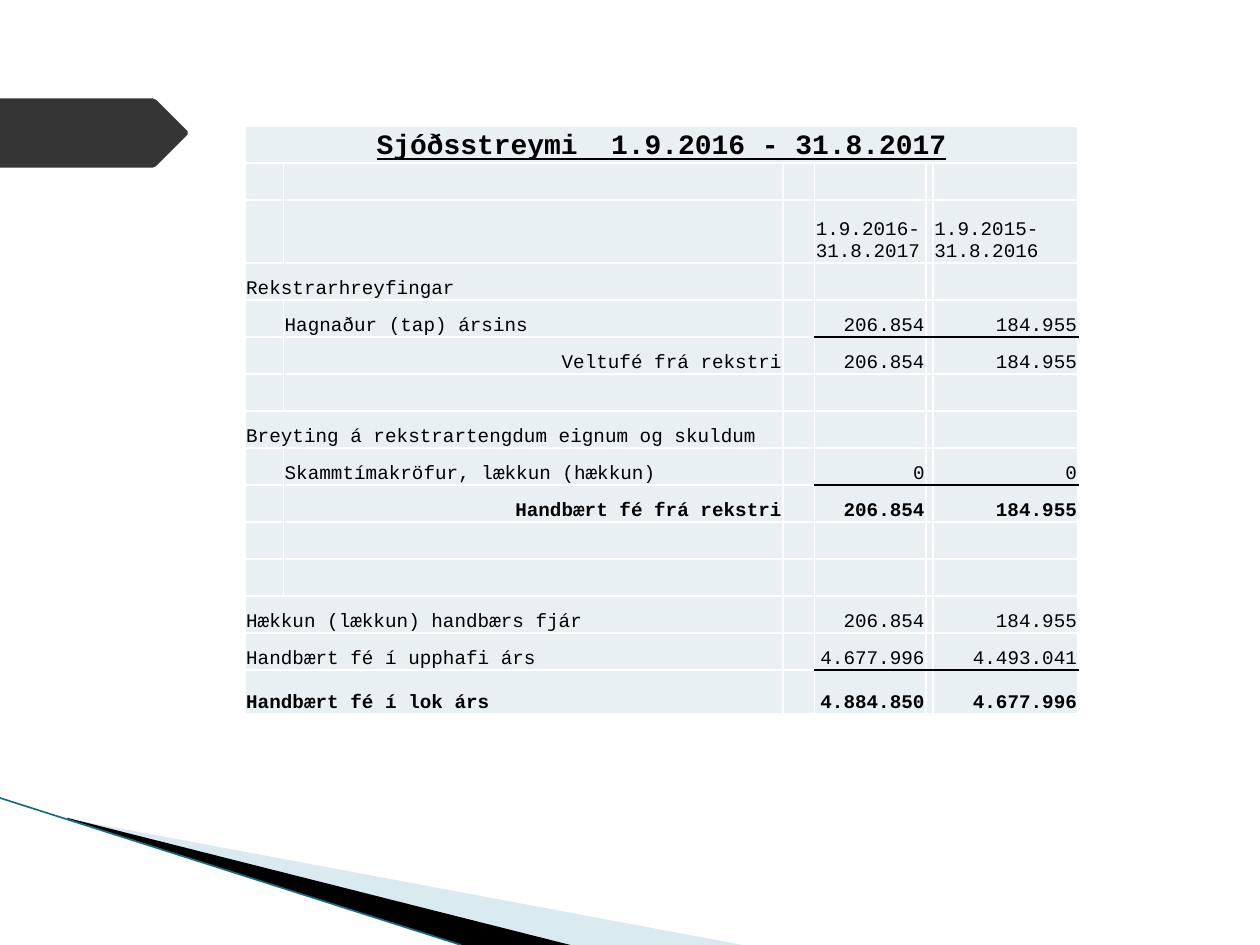
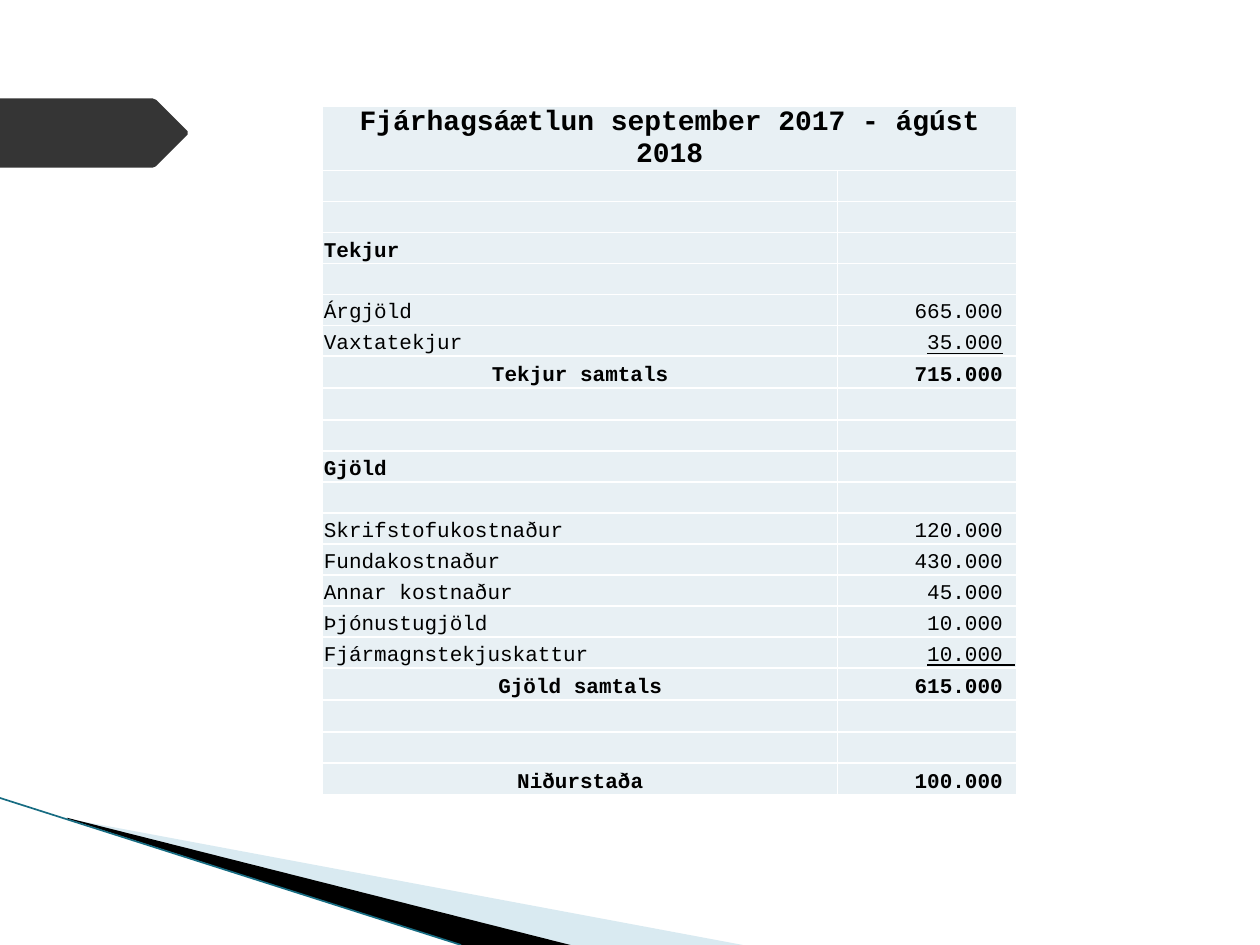
"""Build two slides: a cash flow statement and a budget."""
from lxml.etree import SubElement
from pptx import Presentation
from pptx.dml.color import RGBColor
from pptx.enum.shapes import MSO_CONNECTOR
from pptx.enum.text import MSO_ANCHOR, PP_ALIGN
from pptx.oxml.ns import qn
from pptx.util import Pt

BLACK = RGBColor(0x00, 0x00, 0x00)
WHITE = RGBColor(0xFF, 0xFF, 0xFF)
CHARCOAL = RGBColor(0x35, 0x35, 0x35)
PALE_BLUE = RGBColor(0xD9, 0xEA, 0xF1)
TEAL = RGBColor(0x17, 0x6C, 0x82)
CELL_TINT = RGBColor(0xE8, 0xF0, 0xF4)
FONT = "Courier New"
LEFT, CENTER, RIGHT = PP_ALIGN.LEFT, PP_ALIGN.CENTER, PP_ALIGN.RIGHT

DECORATIONS = [
    (PALE_BLUE, [(39.6, 468), (424.5, 540), (325.4, 540)]),
    (BLACK, [(38.2, 467.3), (326, 540), (263.5, 540), (38.9, 468)]),
    (CHARCOAL, [(0, 56.2), (87.2, 56.2), (89.2, 57), (107.2, 75),
                (107.2, 77), (89.2, 95), (87.2, 95.8), (0, 95.8)]),
]


def add_statement(left, top, widths, heights, ruled_rows=()):
    """Add a decorated slide with an empty tinted table, black rules below ruled_rows."""
    slide = deck.slides.add_slide(deck.slide_layouts[6])
    for color, points in DECORATIONS:
        corners = [(Pt(x), Pt(y)) for x, y in points]
        builder = slide.shapes.build_freeform(*corners[0], scale=1.0)
        builder.add_line_segments(corners[1:], close=True)
        shape = builder.convert_to_shape()
        shape.shadow.inherit = False
        shape.fill.solid()
        shape.fill.fore_color.rgb = color
        shape.line.fill.background()
    edge = slide.shapes.add_connector(MSO_CONNECTOR.STRAIGHT, Pt(0), Pt(456), Pt(263.5), Pt(540))
    edge.line.color.rgb = TEAL
    edge.line.width = Pt(0.95)
    SubElement(edge._element.spPr, qn("a:effectLst"))

    table = slide.shapes.add_table(len(heights), len(widths), Pt(left), Pt(top),
                                   Pt(sum(widths)), Pt(sum(heights))).table
    table.first_row = table.horz_banding = False
    for column, width in zip(table.columns, widths):
        column.width = Pt(width)
    for row_index, (row, height) in enumerate(zip(table.rows, heights)):
        row.height = Pt(height)
        for column_index, cell in enumerate(row.cells):
            cell.margin_left = cell.margin_right = cell.margin_top = Pt(0.7)
            cell.margin_bottom = 0
            cell.vertical_anchor = MSO_ANCHOR.BOTTOM
            for side, rule_row in (("L", None), ("R", None), ("T", row_index - 1), ("B", row_index)):
                ruled = rule_row in ruled_rows and column_index >= 3
                border = SubElement(cell._tc.get_or_add_tcPr(), qn(f"a:ln{side}"), w=str(Pt(1)))
                color = SubElement(SubElement(border, qn("a:solidFill")), qn("a:srgbClr"))
                color.set("val", str(BLACK if ruled else WHITE))
            cell.fill.solid()
            cell.fill.fore_color.rgb = CELL_TINT
            SubElement(cell.text_frame.paragraphs[0]._p, qn("a:endParaRPr"), sz="1100")
    table.cell(0, 0).merge(table.cell(0, len(widths) - 1))
    return table


def write(cell, text, size, align=LEFT, bold=False, underline=False):
    """Write one line of text into a cell."""
    paragraph = cell.text_frame.paragraphs[0]
    paragraph.alignment = align
    font = paragraph.font
    font.name, font.size, font.bold, font.underline = FONT, Pt(size), bold, underline
    font.color.rgb = BLACK
    paragraph.add_run().text = text
    return paragraph


deck = Presentation()
deck.slide_width, deck.slide_height = Pt(720), Pt(540)

cash_flow = add_statement(140, 72, [22, 285.5, 18, 63.6, 3.9, 82.9],
                          [21.15] * 2 + [36] + [21.15] * 11 + [25.2], ruled_rows=(4, 8, 13))
write(cash_flow.cell(0, 0), "Sjóðsstreymi  1.9.2016 - 31.8.2017", 16, CENTER, True, True)
write(cash_flow.cell(2, 3), "1.9.2016- 31.8.2017", 11)
write(cash_flow.cell(2, 5), "1.9.2015- 31.8.2016", 11)
CASH_FLOW_ROWS = [
    (3, 0, "Rekstrarhreyfingar", LEFT, False, None),
    (4, 1, "Hagnaður (tap) ársins", LEFT, False, ("206.854", "184.955")),
    (5, 1, "Veltufé frá rekstri", RIGHT, False, ("206.854", "184.955")),
    (7, 0, "Breyting á rekstrartengdum eignum og skuldum", LEFT, False, None),
    (8, 1, "Skammtímakröfur, lækkun (hækkun)", LEFT, False, ("0", "0")),
    (9, 1, "Handbært fé frá rekstri", RIGHT, True, ("206.854", "184.955")),
    (12, 0, "Hækkun (lækkun) handbærs fjár", LEFT, False, ("206.854", "184.955")),
    (13, 0, "Handbært fé í upphafi árs", LEFT, False, ("4.677.996", "4.493.041")),
    (14, 0, "Handbært fé í lok árs", LEFT, True, ("4.884.850", "4.677.996")),
]
for row, column, label, align, bold, amounts in CASH_FLOW_ROWS:
    if column == 0:
        cash_flow.cell(row, 0).merge(cash_flow.cell(row, 1))
    write(cash_flow.cell(row, column), label, 11, align, bold)
    for amount_column, amount in zip((3, 5), amounts or ()):
        write(cash_flow.cell(row, amount_column), amount, 11, RIGHT, bold)

TALL_ROWS = (7, 8, 17, 18, 20)
budget = add_statement(184.4, 60.5, [294.3, 102.2],
                       [36.6] + [18.3 if row in TALL_ROWS else 17.7 for row in range(1, 21)])
write(budget.cell(0, 0), "Fjárhagsáætlun september 2017 - ágúst 2018", 16, CENTER, True)
BUDGET_HEADINGS = {3: "Tekjur", 10: "Gjöld"}
BUDGET_ITEMS = {
    5: ("Árgjöld", "665.000 "),
    12: ("Skrifstofukostnaður", "120.000 "),
    13: ("Fundakostnaður", "430.000 "),
    14: ("Annar kostnaður", "45.000 "),
    15: ("Þjónustugjöld", "10.000 "),
}
BUDGET_TOTALS = {
    7: ("Tekjur samtals", "715.000 "),
    17: ("Gjöld samtals", "615.000 "),
    20: ("Niðurstaða", "100.000 "),
}
for row, heading in BUDGET_HEADINGS.items():
    write(budget.cell(row, 0), heading, 12, bold=True)
for rows, align, bold in ((BUDGET_ITEMS, LEFT, False), (BUDGET_TOTALS, CENTER, True)):
    for row, (label, amount) in rows.items():
        write(budget.cell(row, 0), label, 12, align, bold)
        write(budget.cell(row, 1), amount, 12, RIGHT, bold)
write(budget.cell(6, 0), "Vaxtatekjur", 12)
interest = write(budget.cell(6, 1), "35.000", 12, RIGHT, underline=True)
interest_gap = interest.add_run()
interest_gap.text = " "
interest_gap.font.underline = False
write(budget.cell(16, 0), "Fjármagnstekjuskattur", 12)
write(budget.cell(16, 1), "10.000 ", 12, RIGHT, underline=True)

deck.save("out.pptx")
